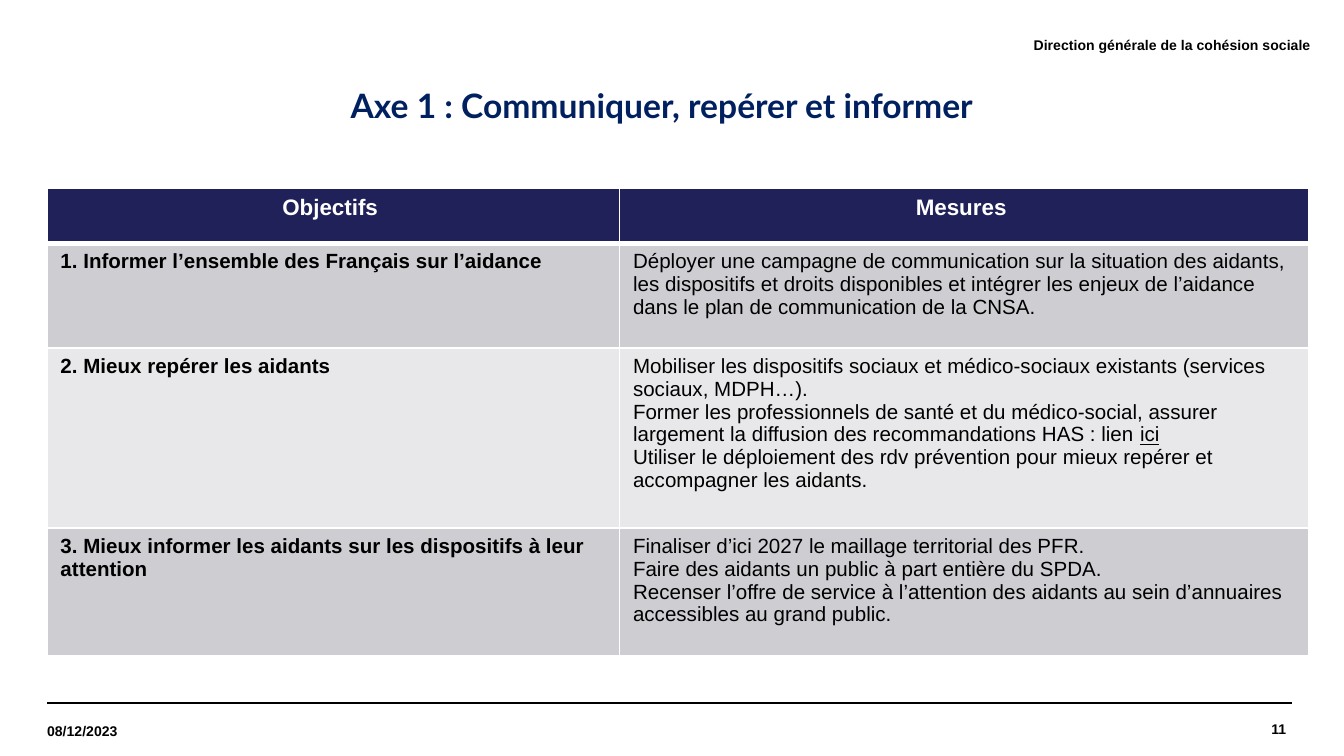
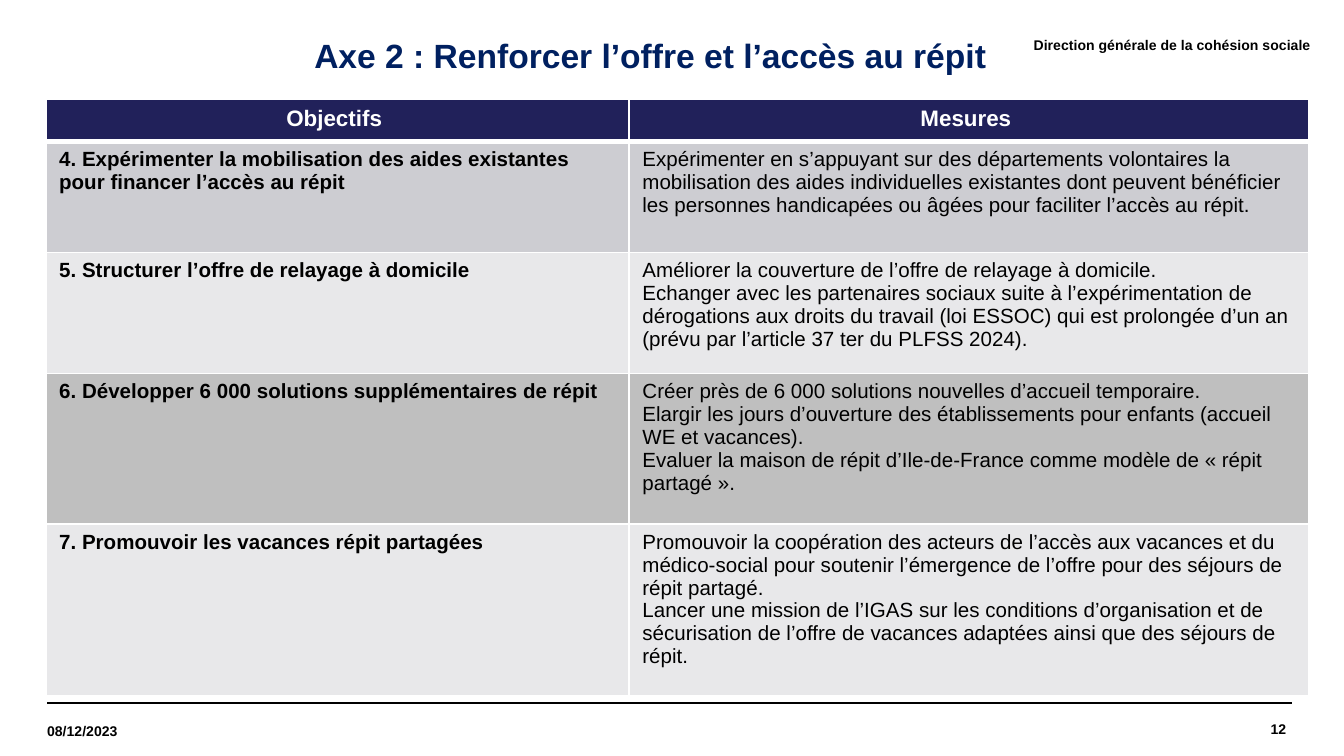
from lxml import etree
from pptx import Presentation
from pptx.dml.color import RGBColor
from pptx.enum.shapes import MSO_CONNECTOR
from pptx.enum.text import MSO_ANCHOR, PP_ALIGN
from pptx.oxml.ns import qn
from pptx.util import Inches, Pt

STRAIGHT = MSO_CONNECTOR.STRAIGHT
MIDDLE, TOP = MSO_ANCHOR.MIDDLE, MSO_ANCHOR.TOP
LEFT, CENTER, RIGHT = PP_ALIGN.LEFT, PP_ALIGN.CENTER, PP_ALIGN.RIGHT

BLACK = RGBColor(0x00, 0x00, 0x00)
WHITE = RGBColor(0xFF, 0xFF, 0xFF)
TITLE_BLUE = RGBColor(0x00, 0x20, 0x60)
HEADER_BLUE = RGBColor(0x21, 0x21, 0x5A)
DARK_BAND = RGBColor(0xCD, 0xCD, 0xD2)
LIGHT_BAND = RGBColor(0xE8, 0xE8, 0xEA)
GREY_BAND = RGBColor(0xBF, 0xBF, 0xBF)

deck = Presentation()
deck.slide_width, deck.slide_height = Inches(10), Inches(5.625)

# Grid of 100 columns by 100 rows
COL, ROW = deck.slide_width / 100, deck.slide_height / 100

HEADINGS = ("Objectifs ", "Mesures ")

# Title, table and row contents; text after "|" is underlined
AXES = [
    {
        "number": "11",
        "title": "Axe 1 : Communiquer, repérer et informer",
        "title_font": "Lato",
        "title_place": (0, 10.31),
        "title_margin": 2.5,
        "table_place": (3.5, 24.89),
        "columns": (42.6, 51.3),
        "rows": (7.29, 13.87, 23.82, 16.89),
        "bands": (DARK_BAND, LIGHT_BAND, DARK_BAND),
        "contents": [
            ("1. Informer l’ensemble des Français sur l’aidance",
             ["Déployer une campagne de communication sur la situation des aidants, les dispositifs et "
              "droits disponibles et intégrer les enjeux de l’aidance dans le plan de communication de "
              "la CNSA."]),
            ("2. Mieux repérer les aidants",
             ["Mobiliser les dispositifs sociaux et médico-sociaux existants (services sociaux, MDPH…).",
              "Former les professionnels de santé et du médico-social, assurer largement la diffusion "
              "des recommandations HAS : lien |ici",
              "Utiliser le déploiement des rdv prévention pour mieux repérer et accompagner les aidants."]),
            ("3. Mieux informer les aidants sur les dispositifs à leur attention",
             ["Finaliser d’ici 2027 le maillage territorial des PFR. \n"
              "Faire des aidants un public à part entière du SPDA.",
              "Recenser l’offre de service à l’attention des aidants au sein d’annuaires accessibles "
              "au grand public."]),
        ],
    },
    {
        "number": "12",
        "title": "Axe 2 : Renforcer l’offre et l’accès au répit",
        "title_font": "Arial",
        "title_place": (-0.6, 3.73),
        "title_margin": 3,
        "table_place": (3.4, 13.16),
        "columns": (43.4, 50.6),
        "rows": (5.51, 14.76, 16, 19.91, 22.76),
        "bands": (DARK_BAND, LIGHT_BAND, GREY_BAND, LIGHT_BAND),
        "contents": [
            ("4. Expérimenter la mobilisation des aides existantes pour financer l’accès au répit",
             ["Expérimenter en s’appuyant sur des départements volontaires la mobilisation des aides "
              "individuelles existantes dont peuvent bénéficier les personnes handicapées ou âgées pour "
              "faciliter l’accès au répit."]),
            ("5. Structurer l’offre de relayage à domicile",
             ["Améliorer la couverture de l’offre de relayage à domicile.",
              "Echanger avec les partenaires sociaux suite à l’expérimentation de dérogations aux droits "
              "du travail (loi ESSOC) qui est prolongée d’un an (prévu par l’article 37 ter du PLFSS 2024)."]),
            ("6. Développer 6 000 solutions supplémentaires de répit",
             ["Créer près de 6 000 solutions nouvelles d’accueil temporaire.",
              "Elargir les jours d’ouverture des établissements pour enfants (accueil WE et vacances).",
              "Evaluer la maison de répit d’Ile-de-France comme modèle de « répit partagé »."]),
            ("7. Promouvoir les vacances répit partagées",
             ["Promouvoir la coopération des acteurs de l’accès aux vacances et du médico-social pour "
              "soutenir l’émergence de l’offre pour des séjours de répit partagé.",
              "Lancer une mission de l’IGAS sur les conditions d’organisation et de sécurisation de "
              "l’offre de vacances adaptées ainsi que des séjours de répit."]),
        ],
    },
]

# Page furniture: text, left, top, width, height, alignment
FURNITURE = [
    (None, 80.9, 93, 14.8, 6.93, RIGHT),
    ("08/12/2023", 3.5, 93.33, 13.2, 6.76, LEFT),
    ("Direction générale de la cohésion sociale", 64.4, 2.49, 33.1, 6.93, RIGHT),
]


def write(frame, texts, size, color, bold, align, font="Arial"):
    for index, text in enumerate(texts):
        para = frame.paragraphs[0] if index == 0 else frame.add_paragraph()
        body, _, underlined = text.partition("|")
        para.text = body
        para.alignment = align
        if underlined:
            span = para.add_run()
            span.text = underlined
            span.font.underline = True
        for span in para.runs:
            span.font.name, span.font.size, span.font.bold = font, Pt(size), bold
            span.font.color.rgb = color


def add_borders(cell, top, bottom):
    properties = cell._tc.get_or_add_tcPr()
    widths = {"a:lnL": 1, "a:lnR": 1, "a:lnT": top, "a:lnB": bottom}
    for index, (tag, width) in enumerate(widths.items()):
        line = etree.Element(qn(tag), w=str(Pt(width)))
        fill = etree.SubElement(line, qn("a:solidFill"))
        etree.SubElement(fill, qn("a:srgbClr"), val=str(WHITE))
        properties.insert(index, line)


for axis in AXES:
    page = deck.slides.add_slide(deck.slide_layouts[6])

    # Footer rules
    for start in (3.5, 3.9):
        rule = page.shapes.add_connector(STRAIGHT, int(start * COL), int(93 * ROW),
                                         int((start + 92.2) * COL), int(93 * ROW))
        rule.line.color.rgb = BLACK
        rule.line.width = Pt(0.8)
        etree.SubElement(rule._element.spPr, qn("a:effectLst"))

    # Page number, date and department
    for text, left, top, width, height, align in FURNITURE:
        box = page.shapes.add_textbox(int(left * COL), int(top * ROW), int(width * COL), int(height * ROW))
        frame = box.text_frame
        frame.word_wrap = True
        frame.vertical_anchor = MIDDLE
        frame.margin_left = frame.margin_right = frame.margin_top = frame.margin_bottom = 0
        write(frame, [text or axis["number"]], 7.5, BLACK, True, align)

    # Table of objectives and measures
    left, top = axis["table_place"]
    table = page.shapes.add_table(len(axis["rows"]), 2, int(left * COL), int(top * ROW),
                                  int(sum(axis["columns"]) * COL), int(sum(axis["rows"]) * ROW)).table
    for column, width in zip(table.columns, axis["columns"]):
        column.width = int(width * COL)
    for row, height in zip(table.rows, axis["rows"]):
        row.height = int(height * ROW)

    for index, heading in enumerate(HEADINGS):
        write(table.cell(0, index).text_frame, [heading], 12, WHITE, True, CENTER)
    for index, (objective, measures) in enumerate(axis["contents"], start=1):
        write(table.cell(index, 0).text_frame, [objective], 11, BLACK, True, LEFT)
        write(table.cell(index, 1).text_frame, measures, 11, BLACK, False, LEFT)

    for index, band in enumerate((HEADER_BLUE, *axis["bands"])):
        for cell in table.rows[index].cells:
            cell.fill.solid()
            cell.fill.fore_color.rgb = band
            cell.vertical_anchor = TOP
            add_borders(cell, top=3 if index == 1 else 1, bottom=3 if index == 0 else 1)

    # Title
    left, top = axis["title_place"]
    title = page.shapes.add_textbox(int(left * COL), int(top * ROW), int(100 * COL), int(7.11 * ROW))
    title.text_frame.word_wrap = True
    title.text_frame.margin_right = int(axis["title_margin"] * COL)
    write(title.text_frame, [axis["title"]], 18, TITLE_BLUE, True, CENTER, axis["title_font"])

deck.save("out.pptx")
